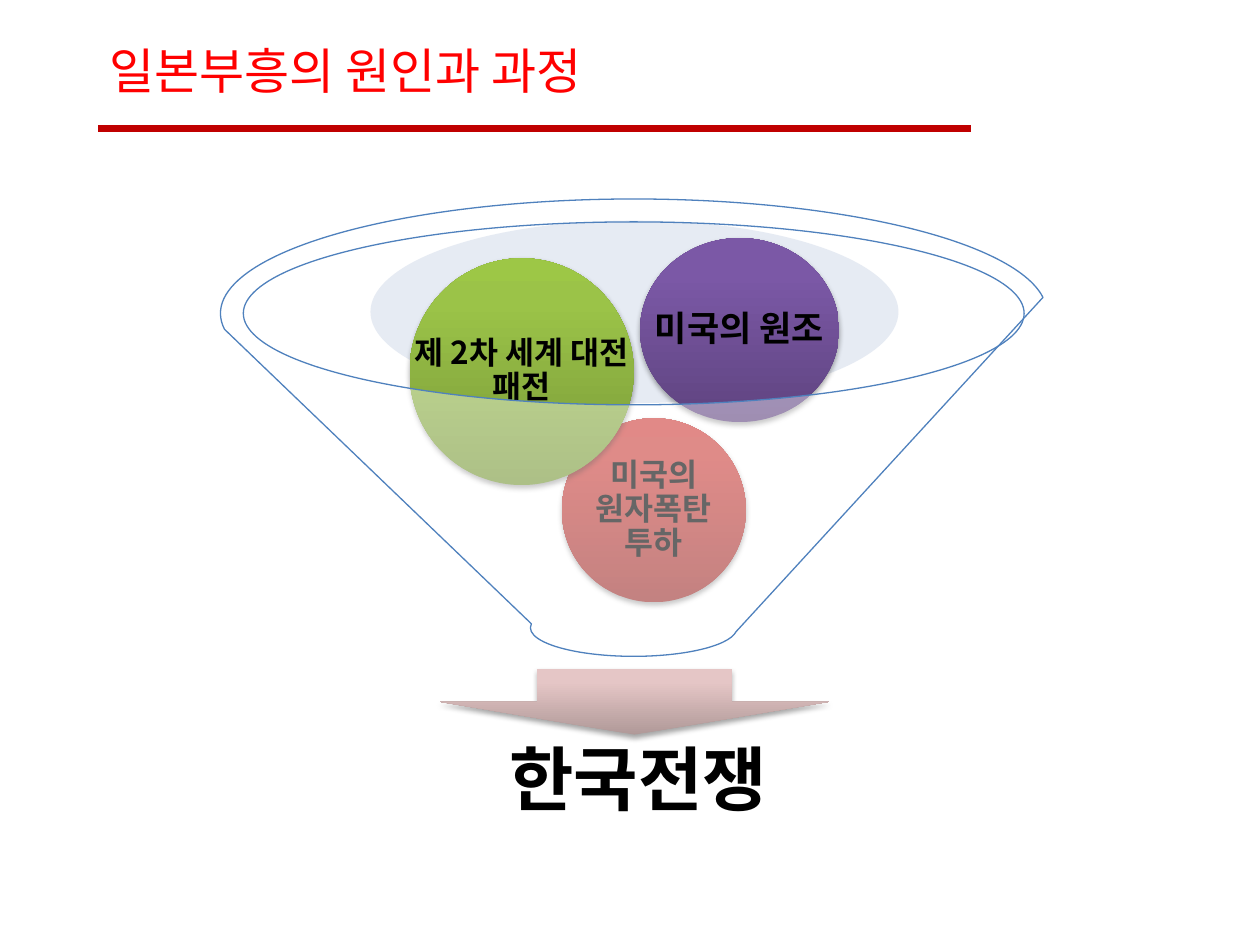
"""Build a slide with a funnel of causes leading to one result."""
from dataclasses import dataclass

import lxml.etree
import pptx
import pptx.dml.color
import pptx.enum.shapes
import pptx.enum.text
import pptx.oxml.ns
import pptx.util

Inches = pptx.util.Inches
Pt = pptx.util.Pt
RGB = pptx.dml.color.RGBColor.from_string
SHAPE = pptx.enum.shapes.MSO_SHAPE
qn = pptx.oxml.ns.qn

Box = tuple[float, float, float, float]
Gradient = tuple[str, str, str]


@dataclass(frozen=True)
class Theme:
    """Colours and type sizes of the slide."""
    font: str = "Noto Sans CJK KR"
    title: str = "FF0000"
    rule: str = "C00000"
    text: str = "000000"
    pool: str = "C2CDE1"
    glass: str = "FFFFFF"
    edge: str = "4F81BD"
    arrow: Gradient = ("B09998", "E5C6C6", "E6C7C6")
    red: Gradient = ("9C2F2D", "CB3E3A", "CE3B37")
    green: Gradient = ("779737", "9BC348", "9DC746")
    purple: Gradient = ("5F4480", "7B58A6", "7C57A8")
    title_size: int = 28
    result_size: int = 40
    ball_size: int = 18
    large_ball_size: int = 20


@dataclass(frozen=True)
class Ball:
    """A cause inside the funnel."""
    text: str
    box: Box
    colors: Gradient
    size: int


THEME = Theme()
BALLS = (
    Ball("미국의 원자폭탄 투하", (4.46, 3.32, 1.46, 1.46), THEME.red, THEME.ball_size),
    Ball("제 2차 세계 대전 패전", (3.25, 2.05, 1.78, 1.8), THEME.green, THEME.ball_size),
    Ball("미국의 원조", (5.08, 1.89, 1.58, 1.46), THEME.purple, THEME.large_ball_size),
)


def add_element(parent, tag: str, **attrs):
    """Append a drawing element with attributes."""
    return lxml.etree.SubElement(parent, qn(tag), {k: str(v) for k, v in attrs.items()})


def add_plain(shapes, kind, box: Box):
    """Add a shape with neither line nor shadow."""
    sp = shapes.add_shape(kind, *map(Inches, box))
    sp.shadow.inherit = False
    sp.line.fill.background()
    return sp


def add_glass(shapes, kind, box: Box, color: str):
    """Add a shape with a 40 % opaque fill."""
    sp = add_plain(shapes, kind, box)
    sp.fill.solid()
    sp.fill.fore_color.rgb = RGB(color)
    rgb = sp._element.spPr.find(qn("a:solidFill")).find(qn("a:srgbClr"))
    add_element(rgb, "a:alpha", val=40000)
    return sp


def add_glossy(shapes, kind, box: Box, colors: Gradient):
    """Add a shape with a vertical gradient and a soft shadow below."""
    sp = add_plain(shapes, kind, box)
    sp.fill.gradient()
    sp.fill.gradient_angle = 90
    spPr = sp._element.spPr
    stops = spPr.find(qn("a:gradFill")).find(qn("a:gsLst"))
    for stop in list(stops):
        stops.remove(stop)
    for pos, color in zip((0, 80000, 100000), colors):
        add_element(add_element(stops, "a:gs", pos=pos), "a:srgbClr", val=color)
    shadow = add_element(spPr.find(qn("a:effectLst")), "a:outerShdw", blurRad=Pt(3.1),
                         dist=Pt(1.8), dir=5400000, rotWithShape=0)
    add_element(add_element(shadow, "a:srgbClr", val="000000"), "a:alpha", val=35000)
    return sp


def add_text(shapes, text: str, box: Box, size: int, color: str = THEME.text,
             bold: bool = True, inset: float = 0.03, spacing: float = 0.9):
    """Add a centred text box."""
    sp = shapes.add_textbox(*map(Inches, box))
    tf = sp.text_frame
    frame = {"word_wrap": True, "vertical_anchor": pptx.enum.text.MSO_ANCHOR.MIDDLE}
    frame |= {f"margin_{side}": Inches(inset) for side in ("left", "top", "right", "bottom")}
    for name, value in frame.items():
        setattr(tf, name, value)
    p = tf.paragraphs[0]
    p.alignment = pptx.enum.text.PP_ALIGN.CENTER
    p.line_spacing = spacing
    r = p.add_run()
    r.text = text
    for name, value in {"name": THEME.font, "size": Pt(size), "bold": bold}.items():
        setattr(r.font, name, value)
    r.font.color.rgb = RGB(color)
    add_element(r._r.get_or_add_rPr(), "a:ea", typeface=THEME.font)
    return sp


def add_rule(shapes, left: float, right: float, y: float):
    """Add the line under the title."""
    line = shapes.add_connector(pptx.enum.shapes.MSO_CONNECTOR.STRAIGHT,
                                Inches(left), Inches(y), Inches(right), Inches(y))
    line.line.color.rgb = RGB(THEME.rule)
    line.line.width = Pt(4)
    add_element(line._element.spPr, "a:effectLst")


def main() -> None:
    """Draw the slide and save it."""
    prs = pptx.Presentation()
    prs.slide_width, prs.slide_height = Inches(10), Inches(7.5)
    shapes = prs.slides.add_slide(prs.slide_layouts[6]).shapes

    add_text(shapes, "일본부흥의 원인과 과정", (0.55, 0.16, 4.38, 0.79), THEME.title_size,
             THEME.title, bold=False, spacing=1.0)
    add_rule(shapes, 0.78, 7.71, 1.02)

    diagram = shapes.add_group_shape().shapes
    add_glass(diagram, SHAPE.OVAL, (2.94, 1.75, 4.19, 1.45), THEME.pool)
    add_glossy(diagram, SHAPE.DOWN_ARROW, (3.49, 5.31, 3.09, 0.52), THEME.arrow)
    add_text(diagram, "한국전쟁", (3.12, 5.37, 3.89, 1.68), THEME.result_size, inset=0.31)
    for ball in BALLS:
        add_glossy(diagram, SHAPE.OVAL, ball.box, ball.colors)
        add_text(diagram, ball.text, ball.box, ball.size)
    funnel = add_glass(diagram, SHAPE.FUNNEL, (1.75, 1.58, 6.56, 3.63), THEME.glass)
    funnel.line.color.rgb = RGB(THEME.edge)
    funnel.line.width = Pt(0.75)

    prs.save("out.pptx")


if __name__ == "__main__":
    main()
